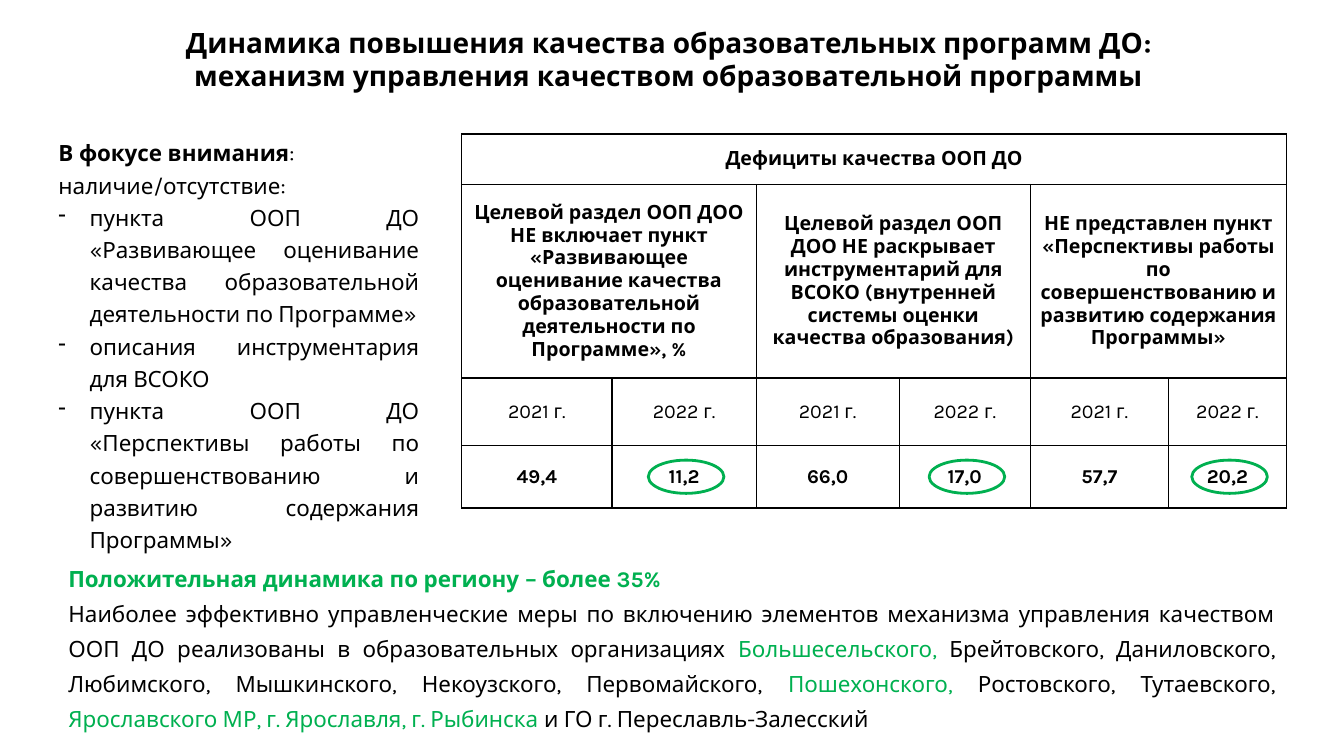
"""Builds the slide on quality dynamics of preschool education programmes."""
from dataclasses import dataclass
from itertools import accumulate

from lxml.etree import SubElement
from pptx import Presentation
from pptx.dml.color import RGBColor
from pptx.enum.shapes import MSO_SHAPE
from pptx.enum.text import MSO_ANCHOR, MSO_AUTO_SIZE, PP_ALIGN
from pptx.oxml.ns import qn
from pptx.util import Inches, Pt


@dataclass(frozen=True)
class Theme:
    font: str = "Karla"
    black: RGBColor = RGBColor(0, 0, 0)
    green: RGBColor = RGBColor(0, 0xB0, 0x50)
    title: int = 20
    body: int = 16
    table: int = 14


theme = Theme()


def write(frame, paragraphs, size, align, spacing=1.0):
    """Fill a text frame with paragraphs made of (text, bold, colour) runs."""
    frame.word_wrap = True
    for index, runs in enumerate(paragraphs):
        paragraph = frame.paragraphs[0] if index == 0 else frame.add_paragraph()
        paragraph.alignment = align
        paragraph.line_spacing = spacing
        for text, bold, color in runs:
            run = paragraph.add_run()
            run.text = text
            run.font.name = theme.font
            run.font.size = Pt(size)
            run.font.bold = bold
            run.font.color.rgb = color


def draw_borders(cell):
    """Draw a thin black line on all four sides of a table cell."""
    properties = cell._tc.get_or_add_tcPr()
    for side in ("a:lnL", "a:lnR", "a:lnT", "a:lnB"):
        line = SubElement(properties, qn(side), w=str(Pt(1)))
        fill = SubElement(line, qn("a:solidFill"))
        SubElement(fill, qn("a:srgbClr"), val=str(theme.black))


presentation = Presentation()
presentation.slide_width = Inches(13.33)
presentation.slide_height = Inches(7.5)
slide = presentation.slides.add_slide(presentation.slide_layouts[5])

title = slide.shapes.title
title.left, title.top = Inches(0.25), Inches(0.25)
title.width, title.height = Inches(12.83), Inches(0.67)
title_lines = [
    "Динамика повышения качества образовательных программ ДО: ",
    "механизм управления качеством образовательной программы ",
]
write(title.text_frame, [[(line, True, theme.black)] for line in title_lines],
      theme.title, PP_ALIGN.CENTER)

focus = slide.shapes.add_textbox(Inches(0.58), Inches(1.33), Inches(3.58), Inches(3.88))
focus_items = [
    "пункта ООП ДО «Развивающее оценивание качества образовательной деятельности по Программе»",
    "описания инструментария для ВСОКО ",
    "пункта ООП ДО «Перспективы работы по совершенствованию и развитию содержания Программы»",
]
focus_intro = [
    [("В фокусе внимания", True, theme.black), (": ", False, theme.black)],
    [("наличие/отсутствие:", False, theme.black)],
]
write(focus.text_frame,
      focus_intro + [[(item, False, theme.black)] for item in focus_items],
      theme.body, PP_ALIGN.JUSTIFY, 1.2)
for paragraph in focus.text_frame.paragraphs[len(focus_intro):]:
    properties = paragraph._p.get_or_add_pPr()
    properties.set("marL", str(Inches(0.31)))
    properties.set("indent", str(-Inches(0.31)))
    SubElement(properties, qn("a:buChar"), char="-")

for frame in (title.text_frame, focus.text_frame):
    frame.margin_left = frame.margin_right = frame.margin_top = frame.margin_bottom = 0
    frame.vertical_anchor = MSO_ANCHOR.TOP
    frame.auto_size = MSO_AUTO_SIZE.NONE

table_left, table_top = 4.58, 1.33
column_widths = [1.49, 1.43, 1.42, 1.3, 1.37, 1.17]
row_heights = [0.5, 1.92, 0.67, 0.62]
deficits = [
    "Целевой раздел ООП ДОО НЕ включает пункт «Развивающее оценивание качества "
    "образовательной деятельности по Программе», %",
    "Целевой раздел ООП ДОО НЕ раскрывает инструментарий для ВСОКО "
    "(внутренней системы оценки качества образования)",
    "НЕ представлен пункт «Перспективы работы по совершенствованию "
    "и развитию содержания Программы»",
]
rows = [
    ["Дефициты качества ООП ДО"],
    deficits,
    ["2021 г.", "2022 г."] * len(deficits),
    ["49,4", "11,2", "66,0", "17,0", "57,7", "20,2"],
]
table = slide.shapes.add_table(
    len(rows), len(column_widths), Inches(table_left), Inches(table_top),
    Inches(sum(column_widths)), Inches(sum(row_heights))).table
table.first_row = table.horz_banding = False
for column, width in zip(table.columns, column_widths):
    column.width = Inches(width)
for row, height in zip(table.rows, row_heights):
    row.height = Inches(height)
for cell in table.iter_cells():
    draw_borders(cell)
    cell.fill.background()
    cell.vertical_anchor = MSO_ANCHOR.MIDDLE
    cell.margin_left = cell.margin_right = Inches(0.07)
    cell.margin_top = cell.margin_bottom = 0
for row_index, texts in enumerate(rows):
    span = len(column_widths) // len(texts)
    for index, text in enumerate(texts):
        cell = table.cell(row_index, index * span)
        if span > 1:
            cell.merge(table.cell(row_index, index * span + span - 1))
        write(cell.text_frame, [[(text, row_index != 2, theme.black)]],
              theme.table, PP_ALIGN.CENTER)

ring_width, ring_height, ring_shift = 0.75, 0.33, 0.02
column_ends = list(accumulate(column_widths, initial=table_left))
ring_top = table_top + sum(row_heights) - (row_heights[-1] + ring_height) / 2
for index in range(1, len(column_widths), 2):
    center = (column_ends[index] + column_ends[index + 1]) / 2 + ring_shift
    ring = slide.shapes.add_shape(
        MSO_SHAPE.OVAL, Inches(center - ring_width / 2), Inches(ring_top),
        Inches(ring_width), Inches(ring_height))
    ring.shadow.inherit = False
    ring.fill.background()
    ring.line.color.rgb = theme.green
    ring.line.width = Pt(2)

summary = slide.shapes.add_textbox(Inches(0.58), Inches(5.48), Inches(12.17), Inches(1.85))
write(summary.text_frame, [
    [("Положительная динамика по региону – более 35% ", True, theme.green)],
    [
        ("Наиболее эффективно управленческие меры по включению элементов механизма "
         "управления качеством ООП ДО реализованы в образовательных организациях ",
         False, theme.black),
        ("Большесельского, ", False, theme.green),
        ("Брейтовского, Даниловского, Любимского, Мышкинского, Некоузского, "
         "Первомайского, ", False, theme.black),
        ("Пошехонского, ", False, theme.green),
        ("Ростовского, Тутаевского, ", False, theme.black),
        ("Ярославского МР, г. Ярославля, г. Рыбинска ", False, theme.green),
        ("и ГО г. Переславль-Залесский", False, theme.black),
    ],
], theme.body, PP_ALIGN.JUSTIFY, 1.3)

presentation.save("out.pptx")
